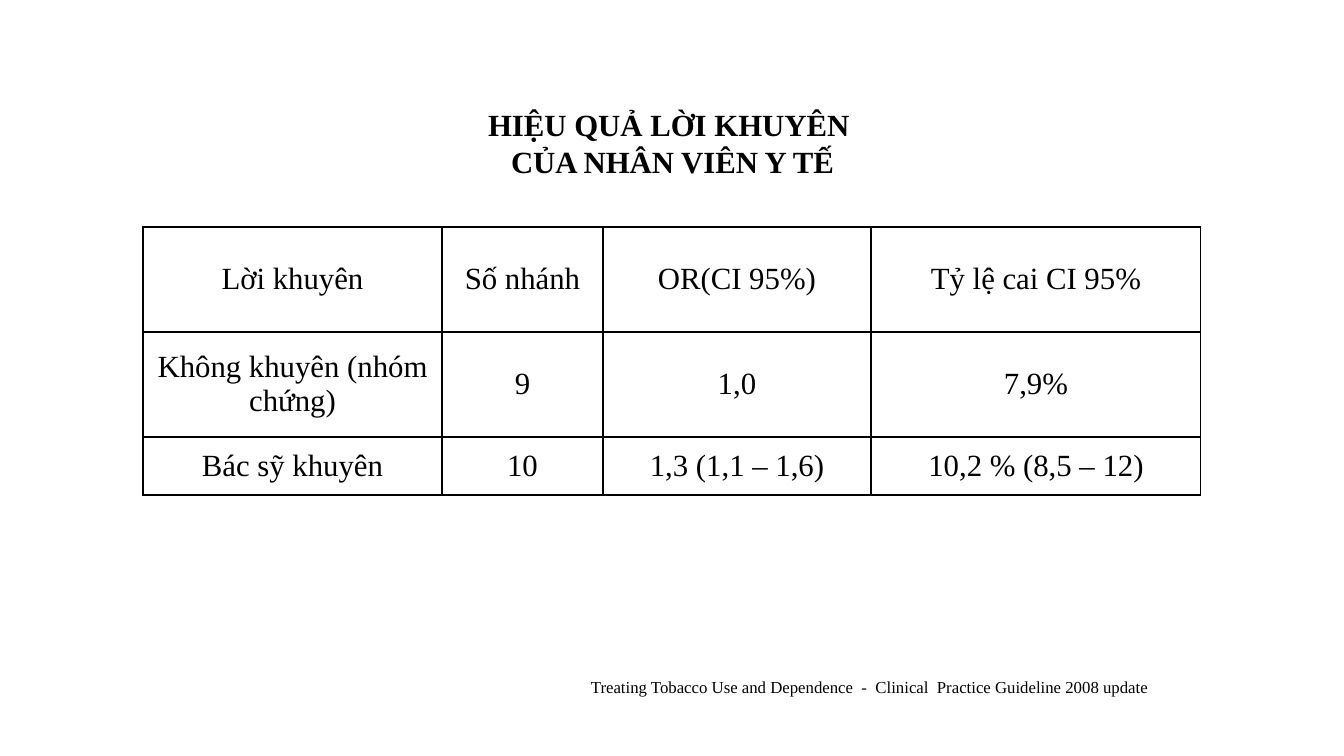
from lxml import etree
from pptx import Presentation
from pptx.dml.color import RGBColor
from pptx.enum.text import MSO_ANCHOR, PP_ALIGN
from pptx.oxml.ns import qn
from pptx.util import Pt

PX = 914400 / 100.8
BLACK = RGBColor(0, 0, 0)
CENTER, RIGHT = PP_ALIGN.CENTER, PP_ALIGN.RIGHT
MIDDLE = MSO_ANCHOR.MIDDLE
BORDERS = ("a:lnL", "a:lnR", "a:lnT", "a:lnB")

TITLE = {"size": Pt(22), "bold": True}
BODY = {"size": Pt(22), "bold": False}
SOURCE = {"size": Pt(12), "bold": False}


def px(*lengths):
    return [round(n * PX) for n in lengths]


def write(tf, lines, align, fmt):
    tf.word_wrap = True
    for i, line in enumerate(lines):
        p = tf.add_paragraph() if i else tf.paragraphs[0]
        p.alignment = align
        r = p.add_run()
        r.text = line
        r.font.name = "Times New Roman"
        r.font.color.rgb = BLACK
        for key, value in fmt.items():
            setattr(r.font, key, value)


prs = Presentation()
prs.slide_width, prs.slide_height = px(1344, 756)
s = prs.slides.add_slide(prs.slide_layouts[6])

source = "Treating Tobacco Use and Dependence  -  Clinical  Practice Guideline 2008 update"
title = ["HIỆU QUẢ LỜI KHUYÊN ", "CỦA NHÂN VIÊN Y TẾ"]
for box, lines, align, fmt in (
    ((209, 672, 950, 30), [source], RIGHT, SOURCE),
    ((219, 101, 907, 118), title, CENTER, TITLE),
):
    sp = s.shapes.add_textbox(*px(*box))
    write(sp.text_frame, lines, align, fmt)

rows = (
    ("Lời khuyên", "Số nhánh", "OR(CI 95%)", "Tỷ lệ cai CI 95%"),
    ("Không khuyên (nhóm chứng)", "9", "1,0", "7,9%"),
    ("Bác sỹ khuyên", "10", "1,3 (1,1 – 1,6)", "10,2 % (8,5 – 12)"),
)
widths = px(299, 161, 268, 330)
heights = px(105, 105, 58)
left, top = px(143, 227)
table = s.shapes.add_table(
    len(rows), len(widths), left, top, sum(widths), sum(heights)
).table
for col, width in zip(table.columns, widths):
    col.width = width
for row, height in zip(table.rows, heights):
    row.height = height

for i, texts in enumerate(rows):
    for j, text in enumerate(texts):
        cell = table.cell(i, j)
        cell.vertical_anchor = MIDDLE
        write(cell.text_frame, [text], CENTER, BODY)
        tcPr = cell._tc.get_or_add_tcPr()
        for tag in BORDERS:
            ln = etree.SubElement(tcPr, qn(tag), w=str(Pt(1)))
            fill = etree.SubElement(ln, qn("a:solidFill"))
            etree.SubElement(fill, qn("a:srgbClr"), val=str(BLACK))
        cell.fill.background()

prs.save("out.pptx")
